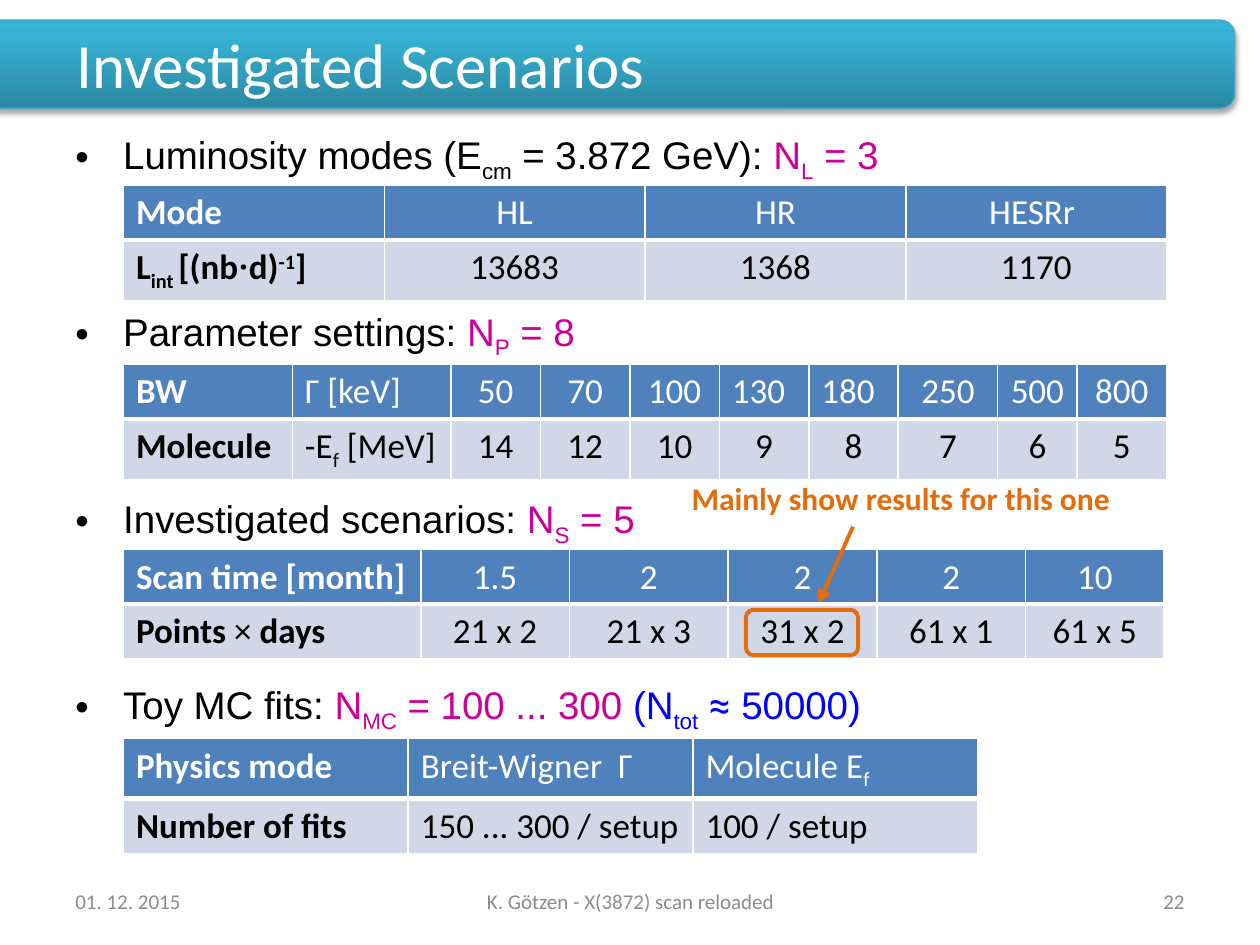
from copy import deepcopy
from dataclasses import dataclass
from lxml import etree
from pptx import Presentation
from pptx.dml.color import RGBColor
from pptx.enum.shapes import MSO_CONNECTOR, MSO_SHAPE
from pptx.enum.text import MSO_ANCHOR, PP_ALIGN
from pptx.oxml import parse_xml
from pptx.oxml.ns import nsdecls, qn
from pptx.util import Inches, Pt

LEFT, MID, RIGHT = PP_ALIGN.LEFT, PP_ALIGN.CENTER, PP_ALIGN.RIGHT
CENTRE = MSO_ANCHOR.MIDDLE
ROUND = MSO_SHAPE.ROUNDED_RECTANGLE
LINE = MSO_CONNECTOR.STRAIGHT


@dataclass(frozen=True)
class Theme:
    white: str = "FFFFFF"
    black: str = "000000"
    grey: str = "8C8C8C"
    pink: str = "CC0099"
    blue: str = "0000FF"
    orange: str = "E46C0A"
    head: str = "4F81BD"
    row: str = "D0D8E8"
    edge: str = "46AAC5"
    band: tuple = ((0, "2A88A2"), (0.8, "37B1D2"), (1, "34B4D6"))
    sans: str = "Calibri"
    body: str = "Arial"
    sign: str = "Roboto"
    title: int = 36
    point: int = 22
    cell: int = 20
    note: int = 18
    foot: int = 12


T = Theme()


def rgb(code):
    return RGBColor.from_string(code)


def write(par, text, size=T.cell, font=T.sans, color=T.black, bold=False, base=0, align=None):
    """Add text to a paragraph; parts between tildes are subscripts."""
    if align is not None:
        par.alignment = align
    for i, part in enumerate(text.split("~")):
        if not part:
            continue
        run = par.add_run()
        run.text = part
        run.font.size, run.font.name, run.font.bold = Pt(size), font, bold
        run.font.color.rgb = rgb(color)
        shift = -25 if i % 2 else base
        if shift:
            run.font._element.set("baseline", str(shift * 1000))


prs = Presentation()
prs.slide_width, prs.slide_height = Inches(10), Inches(7.5)
slide = prs.slides.add_slide(prs.slide_layouts[5])
shapes = slide.shapes

# Title band, behind the title
band = shapes.add_shape(ROUND, Inches(-0.12), Inches(0.16), Inches(9.92), Inches(0.7))
band.fill.gradient()
band.fill.gradient_angle = 90
stops = band.fill._xPr.find(qn("a:gradFill")).find(qn("a:gsLst"))
stops.append(deepcopy(stops[-1]))
for stop, (pos, code) in zip(band.fill.gradient_stops, T.band):
    stop.position = pos
    stop.color.rgb = rgb(code)
band.line.color.rgb = rgb(T.edge)
band.line.width = Pt(0.75)
band._element.spPr.append(parse_xml(
    f'<a:effectLst {nsdecls("a")}><a:outerShdw blurRad="{Pt(3.1)}" dist="{Pt(1.8)}" '
    f'dir="5400000" rotWithShape="0"><a:srgbClr val="{T.black}"><a:alpha val="35000"/>'
    '</a:srgbClr></a:outerShdw></a:effectLst>'))
shapes._spTree.insert(2, band._element)

# Title
title = shapes.title
title.left, title.top = Inches(0.51), Inches(0.23)
title.width, title.height = Inches(8.99), Inches(0.54)
title.text_frame.vertical_anchor = CENTRE
write(title.text_frame.paragraphs[0], "Investigated Scenarios", size=T.title,
      color=T.white, align=LEFT)

# Bullet points: space before in points, then coloured parts
points = [
    (4.5, [("Luminosity modes (E~cm~ = 3.872 GeV): ", {}), ("N~L~ = 3", {"color": T.pink})]),
    (71, [("Parameter settings: ", {}), ("N~P~ = 8", {"color": T.pink})]),
    (77, [("Investigated scenarios: ", {}), ("N~S~ = 5", {"color": T.pink})]),
    (76.5, [("Toy MC fits: ", {}), ("N~MC~ = 100 ... 300 ", {"color": T.pink}),
            ("(N~tot~ ", {"color": T.blue}), ("≈", {"color": T.blue, "font": T.sign}),
            (" 50000)", {"color": T.blue})]),
]
frame = shapes.add_textbox(Inches(0.5), Inches(0.99), Inches(9), Inches(5.83)).text_frame
frame.word_wrap = True
for i, (gap, parts) in enumerate(points):
    par = frame.add_paragraph() if i else frame.paragraphs[0]
    par.space_before = Pt(gap)
    props = par._p.get_or_add_pPr()
    props.set("marL", str(Inches(0.38)))
    props.set("indent", str(-Inches(0.38)))
    etree.SubElement(props, qn("a:buFont")).set("typeface", T.body)
    etree.SubElement(props, qn("a:buChar")).set("char", "•")
    for text, form in parts:
        write(par, text, **{"size": T.point, "font": T.body, **form})

# Footer
for x, width, text, align in [(0.5, 2.33, "01. 12. 2015", LEFT),
                              (3.42, 3.17, "K. Götzen - X(3872) scan reloaded", MID),
                              (7.17, 2.33, "22", RIGHT)]:
    frame = shapes.add_textbox(Inches(x), Inches(6.95), Inches(width), Inches(0.4)).text_frame
    frame.word_wrap = True
    frame.vertical_anchor = CENTRE
    write(frame.paragraphs[0], text, size=T.foot, color=T.grey, align=align)

# Tables: top, column widths, left-aligned cells (row, column), rows
unit = [("L~int ~[(nb", {}), ("·", {"font": T.sign}), ("d)", {}), ("-1", {"base": 30}), ("]", {})]
days = [("Points ", {}), ("×", {"bold": False}), (" days", {})]
tables = [
    (1.47, [2.07] * 4, [],
     [["Mode", "HL", "HR", "HESRr "], [unit, "13683", "1368", "1170"]]),
    (2.89, [1.34, 1.26] + [0.71] * 5 + [0.79, 0.63, 0.71], [(0, 1), (1, 1), (0, 5), (0, 6)],
     [["BW", "Γ [keV]", "50", "70", "100", "130", "180", "250", "500", "800"],
      ["Molecule", "-E~f~ [MeV]", "14", "12", "10", "9", "8", "7", "6", "5"]]),
    (4.36, [2.36, 1.18, 1.26, 1.18, 1.18, 1.1], [],
     [["Scan time [month]", "1.5", "2", "2", "2", "10"],
      [days, "21 x 2", "21 x 3", "31 x 2", "61 x 1", "61 x 5"]]),
    (5.86, [2.26] * 3, [(0, 1), (0, 2), (1, 1), (1, 2)],
     [["Physics mode", "Breit-Wigner  Γ", "Molecule E~f~"],
      ["Number of fits", "150 ... 300 / setup", "100 / setup"]]),
]
for top, widths, lefts, rows in tables:
    grid = shapes.add_table(2, len(widths), Inches(0.98), Inches(top),
                            Inches(sum(widths)), Inches(0.82)).table
    grid.first_row = grid.horz_banding = False
    for col, width in zip(grid.columns, widths):
        col.width = Inches(width)
    for r, row in enumerate(rows):
        for c, parts in enumerate(row):
            cell = grid.cell(r, c)
            props = cell._tc.get_or_add_tcPr()
            thick = "B" if r == 0 else "T"
            for side in "LRTB":
                width = Pt(3 if side == thick else 1)
                props.append(parse_xml(
                    f'<a:ln{side} {nsdecls("a")} w="{width}"><a:solidFill>'
                    f'<a:srgbClr val="{T.white}"/></a:solidFill></a:ln{side}>'))
            cell.fill.solid()
            cell.fill.fore_color.rgb = rgb(T.row if r else T.head)
            align = LEFT if c == 0 or (r, c) in lefts else MID
            base = {"color": T.black if r else T.white, "bold": c == 0, "align": align}
            for text, form in [(parts, {})] if isinstance(parts, str) else parts:
                write(cell.text_frame.paragraphs[0], text, **{**base, **form})

# Call-out: label, frame and arrow
label = shapes.add_textbox(Inches(5.39), Inches(3.75), Inches(3.55), Inches(0.4))
label.text_frame.word_wrap = False
write(label.text_frame.paragraphs[0], "Mainly show results for this one",
      size=T.note, color=T.orange, bold=True)

box = shapes.add_shape(ROUND, Inches(5.92), Inches(4.84), Inches(0.89), Inches(0.36))
box.shadow.inherit = False
box.fill.background()
arrow = shapes.add_connector(LINE, Inches(6.77), Inches(4.18), Inches(6.5), Inches(4.78))
for item in (box, arrow):
    item.line.color.rgb = rgb(T.orange)
    item.line.width = Pt(2.25)
etree.SubElement(arrow.line._get_or_add_ln(), qn("a:tailEnd")).set("type", "arrow")
etree.SubElement(arrow._element.spPr, qn("a:effectLst"))

prs.save("out.pptx")
